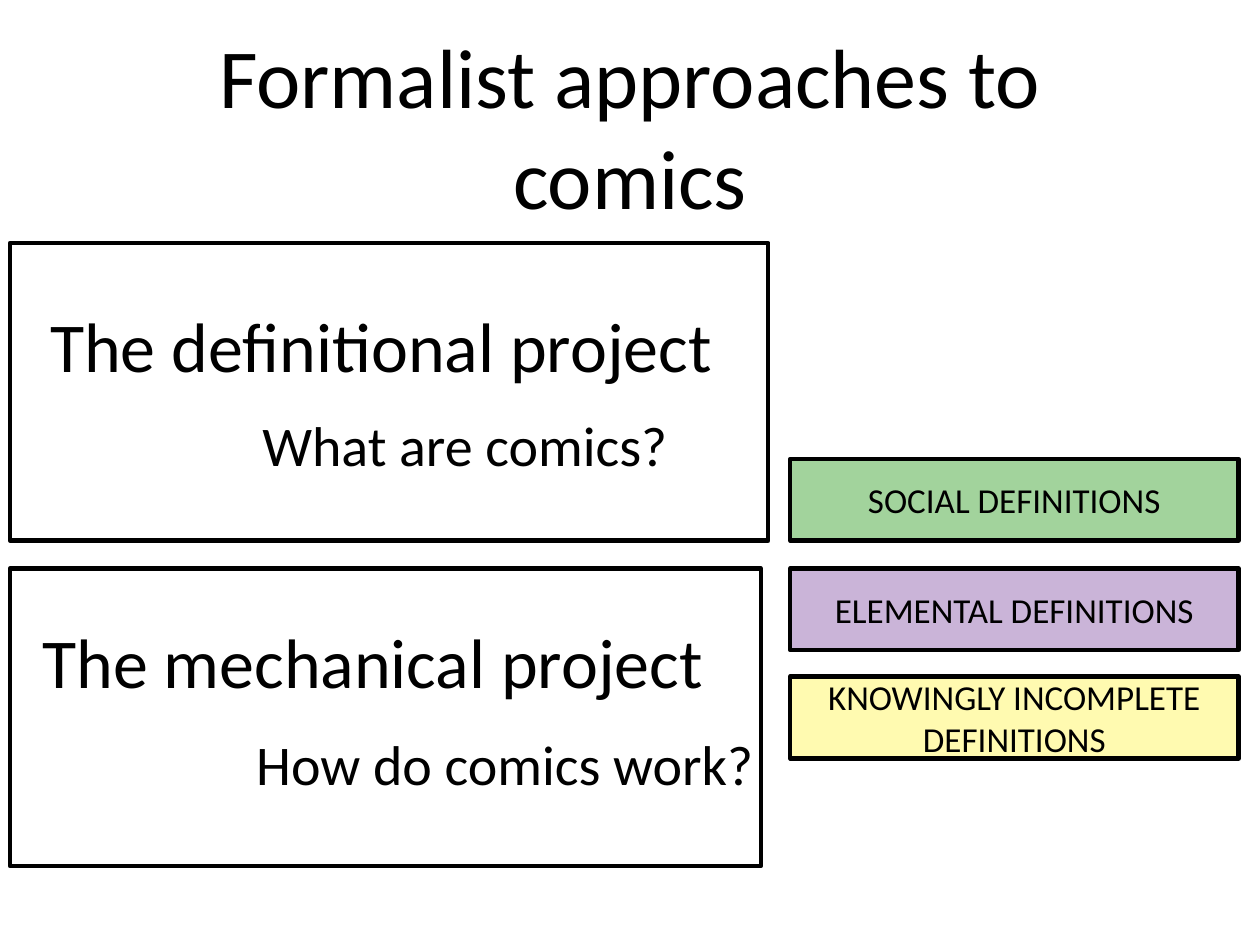
from pptx import Presentation
from pptx.dml.color import RGBColor
from pptx.enum.shapes import MSO_SHAPE
from pptx.enum.text import MSO_ANCHOR, MSO_AUTO_SIZE, PP_ALIGN
from pptx.util import Cm, Pt

COLORS = {
    "ink": "000000",
    "paper": "FFFFFF",
    "social": "A2D39C",
    "elemental": "CAB4D8",
    "incomplete": "FFFAB0",
}


def write(box, text, size=20, font="Calibri", color="ink",
          align=PP_ALIGN.CENTER, anchor=MSO_ANCHOR.MIDDLE):
    frame = box.text_frame
    frame.word_wrap = True
    frame.auto_size = MSO_AUTO_SIZE.NONE
    frame.vertical_anchor = anchor
    para = frame.paragraphs[0]
    para.alignment = align
    span = para.add_run()
    span.text = text
    span.font.name = font
    span.font.size = Pt(size)
    span.font.color.rgb = RGBColor.from_string(COLORS[color])


def add_panel(page, left, top, width, height, fill):
    panel = page.shapes.add_shape(
        MSO_SHAPE.RECTANGLE, Cm(left), Cm(top), Cm(width), Cm(height))
    panel.shadow.inherit = False
    panel.fill.solid()
    panel.fill.fore_color.rgb = RGBColor.from_string(COLORS[fill])
    panel.line.color.rgb = RGBColor.from_string(COLORS["ink"])
    panel.line.width = Pt(2.5)
    return panel


deck = Presentation()
deck.slide_width, deck.slide_height = Cm(25.4), Cm(19.05)
page = deck.slides.add_slide(deck.slide_layouts[5])

title = page.shapes.title
title.left, title.top = Cm(1.9), Cm(-0.64)
title.width, title.height = Cm(21.6), Cm(6.35)
write(title, "Formalist approaches to comics", size=48)

projects = [
    (4.9, 15.29, [
        ("The definitional project", 40, 0.38, 5.89, 14.6),
        ("What are comics?", 32, 4.93, 7.9, 8.89),
    ]),
    (11.46, 15.14, [
        ("The mechanical project", 40, 0.43, 12.27, 14.17),
        ("How do comics work?", 32, 4.78, 14.33, 10.8),
    ]),
]
for panel_top, panel_width, lines in projects:
    add_panel(page, 0.2, panel_top, panel_width, 6, "paper")
    for text, size, left, top, width in lines:
        box = page.shapes.add_textbox(Cm(left), Cm(top), Cm(width), Cm(2.11))
        write(box, text, size=size)

definitions = [
    ("SOCIAL DEFINITIONS", 9.25, "social"),
    ("ELEMENTAL DEFINITIONS", 11.46, "elemental"),
    ("KNOWINGLY INCOMPLETE DEFINITIONS", 13.64, "incomplete"),
]
for text, top, fill in definitions:
    write(add_panel(page, 15.93, top, 9.04, 1.65, fill), text)

deck.save("out.pptx")
